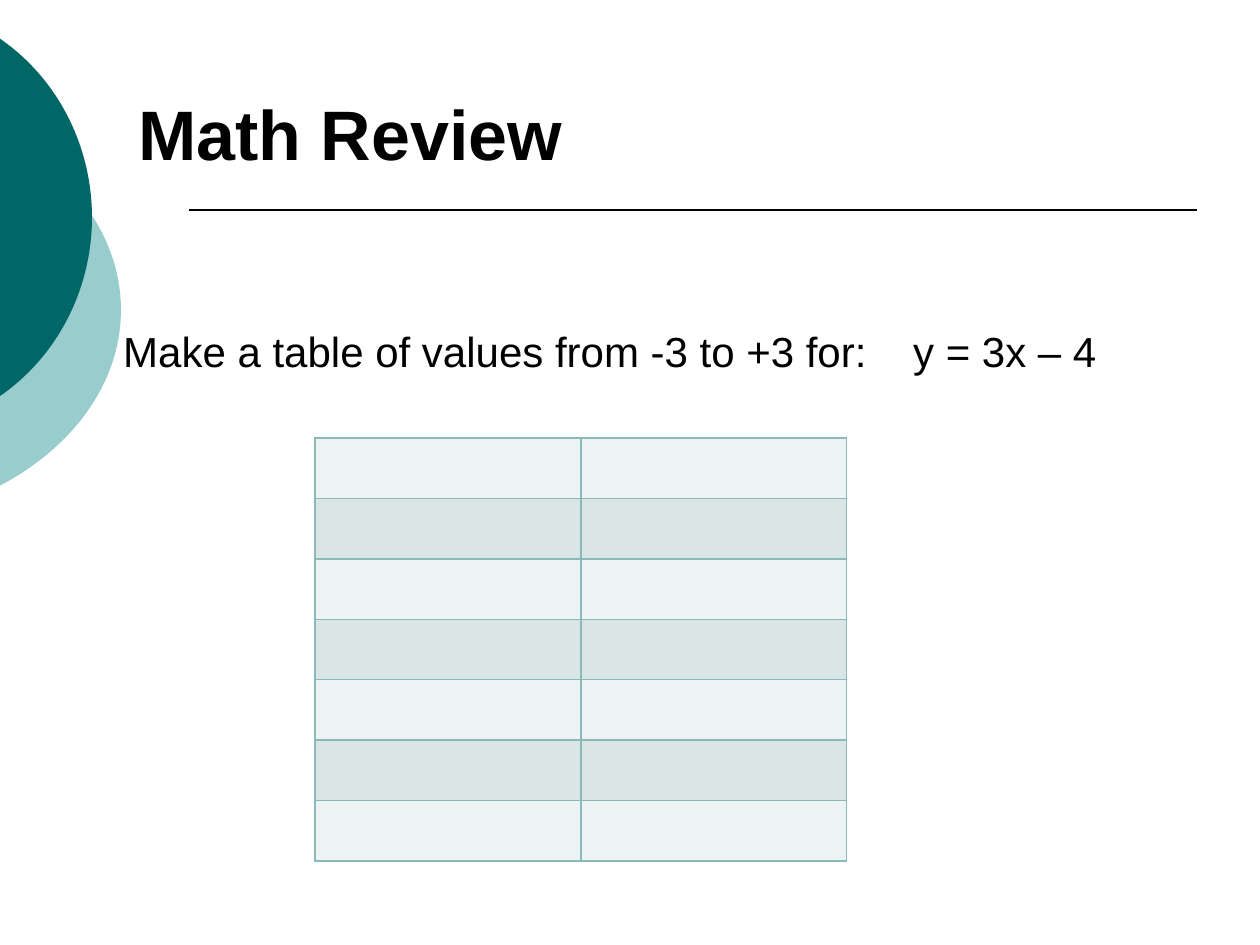
from dataclasses import dataclass

from lxml.etree import SubElement
from pptx import Presentation
from pptx.dml.color import RGBColor
from pptx.enum.shapes import MSO_CONNECTOR
from pptx.enum.text import MSO_ANCHOR
from pptx.oxml.ns import qn
from pptx.slide import Slide
from pptx.table import _Cell
from pptx.util import Pt

Point = tuple[float, float]


@dataclass(frozen=True)
class Theme:
    font: str = "Arial"
    ink: str = "000000"
    dark_disc: str = "006666"
    light_disc: str = "99CCCC"
    bands: tuple[str, str] = ("EDF3F3", "DAE6E6")
    border: str = "8AB9B9"
    title_size: float = 40
    body_size: float = 24


@dataclass(frozen=True)
class Disc:
    left: float
    top: float
    width: float
    height: float
    upper_arc: tuple[Point, Point, Point, Point]
    color: str


THEME = Theme()
DISCS = (
    Disc(-254.88, 54, 324, 246.24,
         ((-0.72, 76.32), (43.2, 99.36), (69.12, 136.8), (69.12, 177.12)),
         THEME.light_disc),
    Disc(-190.8, 0, 243.36, 248.4,
         ((-0.72, 21.6), (33.12, 44.64), (52.56, 83.52), (52.56, 124.2)),
         THEME.dark_disc),
)
ROWS, COLUMNS = 7, 2
COLUMN_WIDTH, ROW_HEIGHT = 151.92, 34.56


def draw_disc(page: Slide, disc: Disc) -> None:
    middle = disc.upper_arc[-1][1]
    lower_arc = [(x, 2 * middle - y) for x, y in reversed(disc.upper_arc)]
    builder = page.shapes.build_freeform(0, 0)
    builder.add_line_segments([(Pt(disc.width), Pt(disc.height))])
    shape = builder.convert_to_shape()
    shape.left, shape.top = Pt(disc.left), Pt(disc.top)
    shape.width, shape.height = Pt(disc.width), Pt(disc.height)
    outline = shape._element.find(f".//{qn('a:path')}")
    for segment in list(outline):
        outline.remove(segment)
    for kind, points in (
        ("moveTo", disc.upper_arc[:1]),
        ("cubicBezTo", disc.upper_arc[1:]),
        ("cubicBezTo", lower_arc[1:]),
        ("close", ()),
    ):
        segment = SubElement(outline, qn(f"a:{kind}"))
        for x, y in points:
            SubElement(segment, qn("a:pt"), x=str(Pt(x - disc.left)),
                       y=str(Pt(y - disc.top)))
    shape.shadow.inherit = False
    shape.fill.solid()
    shape.fill.fore_color.rgb = RGBColor.from_string(disc.color)
    shape.line.fill.background()


def draw_rule(page: Slide, left: float, right: float, top: float) -> None:
    rule = page.shapes.add_connector(
        MSO_CONNECTOR.STRAIGHT, Pt(left), Pt(top), Pt(right), Pt(top))
    rule.line.color.rgb = RGBColor.from_string(THEME.ink)
    rule.line.width = Pt(1)
    SubElement(rule._element.spPr, qn("a:effectLst"))


def write_text(page: Slide, text: str, *, left: float, top: float, width: float,
               height: float, size: float, bold: bool = False, wrap: bool = True,
               anchor: MSO_ANCHOR = MSO_ANCHOR.TOP, margin_top: float = 3.6,
               line_spacing: float = 1.0, tab: float | None = None) -> None:
    box = page.shapes.add_textbox(Pt(left), Pt(top), Pt(width), Pt(height))
    frame = box.text_frame
    frame.word_wrap = wrap
    frame.vertical_anchor = anchor
    frame.margin_top = Pt(margin_top)
    para = frame.paragraphs[0]
    para.line_spacing = line_spacing
    span = para.add_run()
    span.text = text
    span.font.name = THEME.font
    span.font.size = Pt(size)
    span.font.bold = bold
    span.font.color.rgb = RGBColor.from_string(THEME.ink)
    if tab is not None:
        stops = SubElement(para._p.get_or_add_pPr(), qn("a:tabLst"))
        SubElement(stops, qn("a:tab"), pos=str(Pt(tab)), algn="l")


def style_cell(cell: _Cell, color: str) -> None:
    properties = cell._tc.get_or_add_tcPr()
    for side in ("lnL", "lnR", "lnT", "lnB"):
        line = SubElement(properties, qn(f"a:{side}"), w=str(Pt(1)))
        fill = SubElement(line, qn("a:solidFill"))
        SubElement(fill, qn("a:srgbClr"), val=THEME.border)
    cell.fill.solid()
    cell.fill.fore_color.rgb = RGBColor.from_string(color)


def draw_table(page: Slide, left: float, top: float) -> None:
    table = page.shapes.add_table(
        ROWS, COLUMNS, Pt(left), Pt(top),
        Pt(COLUMNS * COLUMN_WIDTH), Pt(ROWS * ROW_HEIGHT)).table
    table.first_row = False
    for column in table.columns:
        column.width = Pt(COLUMN_WIDTH)
    for index, row in enumerate(table.rows):
        row.height = Pt(ROW_HEIGHT)
        for cell in row.cells:
            style_cell(cell, THEME.bands[index % 2])


def main() -> None:
    deck = Presentation()
    deck.slide_width, deck.slide_height = Pt(720), Pt(540)
    page = deck.slides.add_slide(deck.slide_layouts[6])
    for disc in DISCS:
        draw_disc(page, disc)
    draw_rule(page, 108, 684, 120)
    write_text(page, "Math Review", left=72, top=47.8, width=259.2, height=55.4,
               size=THEME.title_size, bold=True, wrap=False,
               anchor=MSO_ANCHOR.BOTTOM)
    write_text(page, "Make a table of values from -3 to +3 for:\ty = 3x – 4",
               left=63.36, top=144, width=612, height=324, size=THEME.body_size,
               margin_top=45, line_spacing=0.9, tab=451.4)
    draw_table(page, 180, 250.2)
    deck.save("out.pptx")


if __name__ == "__main__":
    main()
